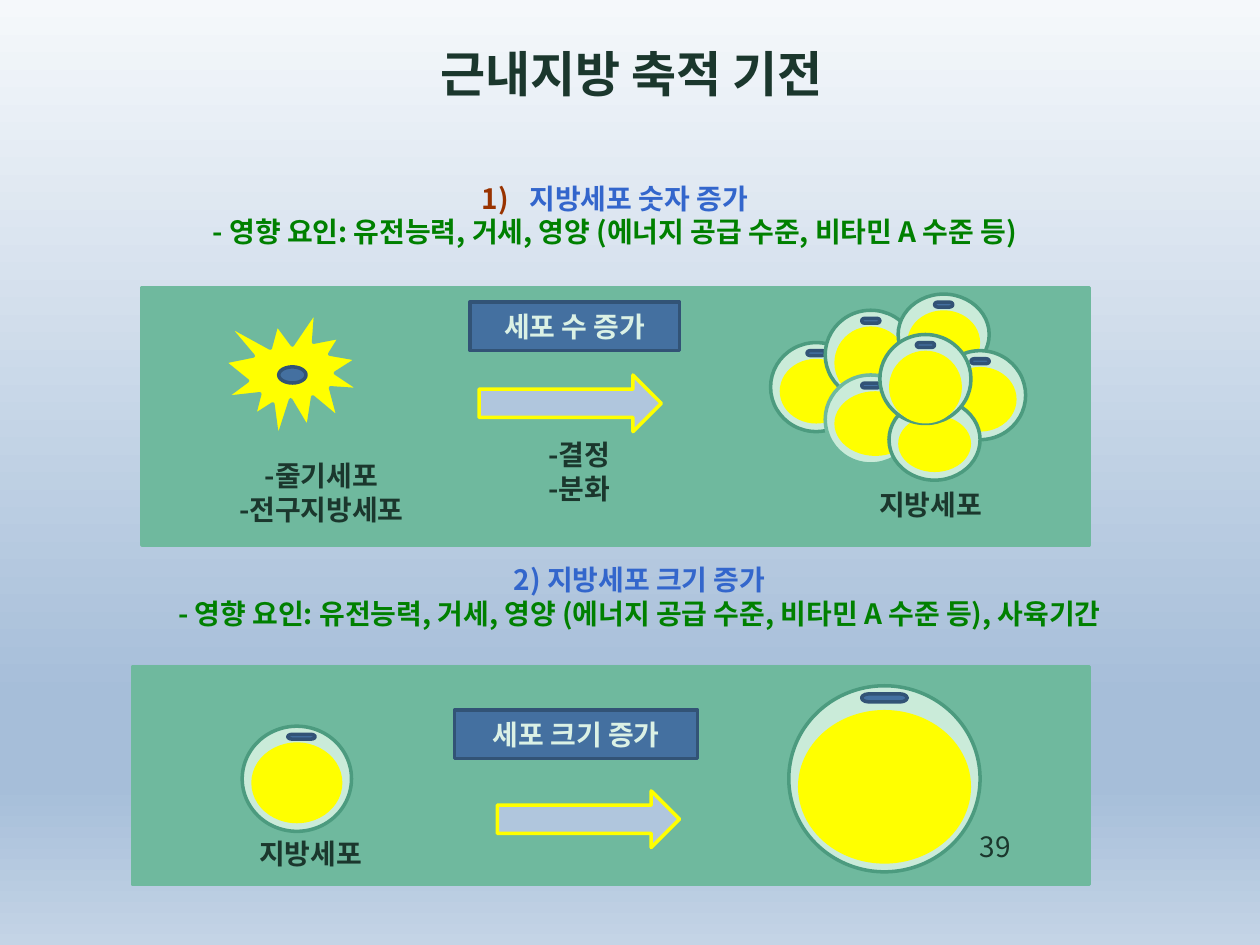
"""Build the slide on how intramuscular fat accumulates."""
from dataclasses import dataclass

from lxml.etree import SubElement
from pptx import Presentation
from pptx.dml.color import RGBColor
from pptx.enum.shapes import MSO_SHAPE as Shape
from pptx.enum.text import MSO_ANCHOR as Anchor, MSO_AUTO_SIZE as AutoSize, PP_ALIGN as Align
from pptx.oxml.ns import qn
from pptx.util import Inches, Pt


@dataclass(frozen=True)
class Theme:
    font: str = "Noto Sans CJK KR"
    title_size: int = 28
    text_size: int = 16
    leading: float = 1.2
    line: int = 2
    ink: str = "1B372D"
    heading: str = "3366CC"
    factor: str = "008000"
    number: str = "993300"
    panel: str = "6FB99E"
    membrane: str = "CAEBD9"
    rim: str = "4C9B7F"
    fat: str = "FFFF00"
    nucleus: str = "4470A0"
    nucleus_rim: str = "325376"
    tag_text: str = "DBF1E5"
    arrow: str = "B0C6DD"
    sky: tuple = ((0, "F5F8FB"), (74, "A6BED9"), (83, "A6BED9"), (100, "C4D4E6"))


THEME = Theme()
WIDTH, HEIGHT = 10, 7.5
LEFT, COLUMN, ROW = 1.055, 0.0723, 0.0642

TITLE = ("근내지방 축적 기전", (0.02, 0.03, 0.643, 0.095))
HEADINGS = [
    (("지방세포 숫자 증가",
      "- 영향 요인: 유전능력, 거세, 영양 (에너지 공급 수준, 비타민 A 수준 등)"),
     (0.035, 0.185, 0.906, 0.12), True),
    (("2) 지방세포 크기 증가",
      "- 영향 요인: 유전능력, 거세, 영양 (에너지 공급 수준, 비타민 A 수준 등), 사육기간"),
     (0.035, 0.589, 0.945, 0.085), False),
]
PANELS = [
    {
        "top": 2.27,
        "area": (1, 0.2, 104, 31.8),
        "tag": ("세포 수 증가", (37, 2, 23, 6)),
        "arrow": (38, 11, 20, 7),
        "stem_cell": ((10, 3, 15, 16), (16, 10, 3, 2)),
        "cells": [
            ((70, 7, 10, 11), (1, 2, 8, 8), (4, 1, 2, 0.6)),
            ((76, 3, 10, 11), (1, 2, 8, 9), (4, 1, 2, 0.6)),
            ((76, 11, 10, 11), (1, 2, 9, 8), (4, 1, 2, 0.6), THEME.panel),
            ((84, 1, 10, 10), (1, 2, 8, 8), (4, 1, 2, 0.6)),
            ((88, 8, 10, 11), (1, 2, 8, 8), (4, 1, 2, 0.6)),
            ((83, 14, 10, 10), (1, 2, 8, 7), (5, 0, 3, 0.6)),
            ((82, 6, 10, 11), (1, 2, 8, 9), (4, 1, 2, 0.6)),
        ],
        "labels": [
            (("-줄기세포", "-전구지방세포"), (6.7, 20.6, 28, 10)),
            (("-결정", "-분화"), (43, 18, 12, 10)),
            (("지방세포",), (77.8, 24.1, 19.5, 5.8)),
        ],
    },
    {
        "top": 5.25,
        "area": (0, 0.6, 105, 27),
        "tag": ("세포 크기 증가", (35.3, 6, 26.7, 6)),
        "arrow": (40, 16, 20, 7),
        "cells": [
            ((12, 8, 12, 13), (1, 2, 10, 10), (5, 1, 3, 0.6)),
            ((72, 3, 21, 23), (1, 3, 19, 19), (8, 1, 5, 1)),
        ],
        "labels": [(("지방세포",), (11, 20.9, 17, 5.8))],
    },
]
PAGE_NUMBER = ("39", (91.6, 20, 28, 4.8))


def on_grid(cell, top):
    column, row, width, height = cell
    return [Inches(n) for n in (LEFT + column * COLUMN, top + row * ROW,
                                width * COLUMN, height * ROW)]


def place(box, shares):
    box.left, box.top, box.width, box.height = [
        Inches(share * side) for share, side in zip(shares, (WIDTH, HEIGHT) * 2)]


def write(box, lines, colors=(THEME.ink,), size=THEME.text_size, bold=True,
          align=Align.CENTER, anchor=Anchor.TOP):
    frame = box.text_frame
    frame.word_wrap = True
    frame.auto_size = AutoSize.NONE
    frame.vertical_anchor = anchor
    for index, line in enumerate(lines):
        para = frame.add_paragraph() if index else frame.paragraphs[0]
        para.alignment = align
        para.space_before = Pt(0)
        para.line_spacing = Pt(size * THEME.leading)
        span = para.add_run()
        span.text = line
        font = span.font
        font.name, font.size, font.bold = THEME.font, Pt(size), bold
        font.color.rgb = RGBColor.from_string(colors[min(index, len(colors) - 1)])
        SubElement(font._element, qn("a:ea"), typeface=THEME.font)
    return frame.paragraphs


def set_bullet(para, numbered, indent):
    properties = para._p.get_or_add_pPr()
    properties.set("marL", str(indent))
    properties.set("indent", str(-indent))
    if numbered:
        color = SubElement(properties, qn("a:buClr"))
        SubElement(color, qn("a:srgbClr"), val=THEME.number)
        SubElement(properties, qn("a:buFont"), typeface=THEME.font)
        SubElement(properties, qn("a:buAutoNum"), type="arabicParenR")
    else:
        SubElement(properties, qn("a:buNone"))


def add_text_shadow(span):
    properties = span.font._element
    effects = properties.makeelement(qn("a:effectLst"))
    properties.find(qn("a:solidFill")).addnext(effects)
    shadow = SubElement(effects, qn("a:outerShdw"), blurRad="38100", dist="38100", dir="2700000")
    color = SubElement(shadow, qn("a:srgbClr"), val="000000")
    SubElement(color, qn("a:alpha"), val="43000")


def draw(page, kind, place_at, fill, line=None):
    shape = page.shapes.add_shape(kind, *place_at)
    shape.shadow.inherit = False
    shape.fill.solid()
    shape.fill.fore_color.rgb = RGBColor.from_string(fill)
    if line:
        shape.line.color.rgb = RGBColor.from_string(line)
        shape.line.width = Pt(THEME.line)
    else:
        shape.line.fill.background()
    return shape


def draw_cell(page, top, body, fat, nucleus, rim=THEME.rim):
    parts = [(Shape.FLOWCHART_CONNECTOR, (0, 0, *body[2:]), THEME.membrane, rim),
             (Shape.FLOWCHART_CONNECTOR, fat, THEME.fat, None),
             (Shape.FLOWCHART_TERMINATOR, nucleus, THEME.nucleus, THEME.nucleus_rim)]
    for kind, (column, row, width, height), fill, line in parts:
        spot = (body[0] + column, body[1] + row, width, height)
        draw(page, kind, on_grid(spot, top), fill, line)


def draw_panel(page, panel):
    top = panel["top"]
    draw(page, Shape.RECTANGLE, on_grid(panel["area"], top), THEME.panel, THEME.panel)
    if "stem_cell" in panel:
        body, nucleus = [on_grid(spot, top) for spot in panel["stem_cell"]]
        draw(page, Shape.EXPLOSION1, body, THEME.fat, THEME.panel)
        draw(page, Shape.OVAL, nucleus, THEME.nucleus, THEME.nucleus_rim)
    text, spot = panel["tag"]
    tag = draw(page, Shape.RECTANGLE, on_grid(spot, top), THEME.nucleus, THEME.nucleus_rim)
    write(tag, [text], colors=(THEME.tag_text,), anchor=Anchor.MIDDLE)
    draw(page, Shape.RIGHT_ARROW, on_grid(panel["arrow"], top), THEME.arrow, THEME.fat)
    for cell in panel["cells"]:
        draw_cell(page, top, *cell)
    for lines, spot in panel["labels"]:
        write(page.shapes.add_textbox(*on_grid(spot, top)), lines)


def paint_background(page):
    fill = page.background.fill
    fill.gradient()
    fill.gradient_angle = 270
    stops = fill.gradient_stops[0]._gs.getparent()
    for stop in list(stops):
        stops.remove(stop)
    for position, color in THEME.sky:
        stop = SubElement(stops, qn("a:gs"), pos=str(position * 1000))
        SubElement(stop, qn("a:srgbClr"), val=color)


def main():
    deck = Presentation()
    deck.slide_width, deck.slide_height = Inches(WIDTH), Inches(HEIGHT)
    page = deck.slides.add_slide(deck.slide_layouts[3])
    paint_background(page)
    title, *bodies = page.placeholders
    text, shares = TITLE
    place(title, shares)
    paras = write(title, [text], size=THEME.title_size, align=Align.RIGHT, anchor=Anchor.MIDDLE)
    add_text_shadow(paras[0].runs[0])
    for box, (lines, shares, numbered) in zip(bodies, HEADINGS):
        place(box, shares)
        paras = write(box, lines, colors=(THEME.heading, THEME.factor))
        for index, para in enumerate(paras):
            set_bullet(para, numbered and index == 0, Inches(0.38) if numbered else 0)
    for panel in PANELS:
        draw_panel(page, panel)
    text, spot = PAGE_NUMBER
    number = page.shapes.add_textbox(*on_grid(spot, PANELS[-1]["top"]))
    write(number, [text], bold=False, align=Align.LEFT)
    deck.save("out.pptx")


if __name__ == "__main__":
    main()
